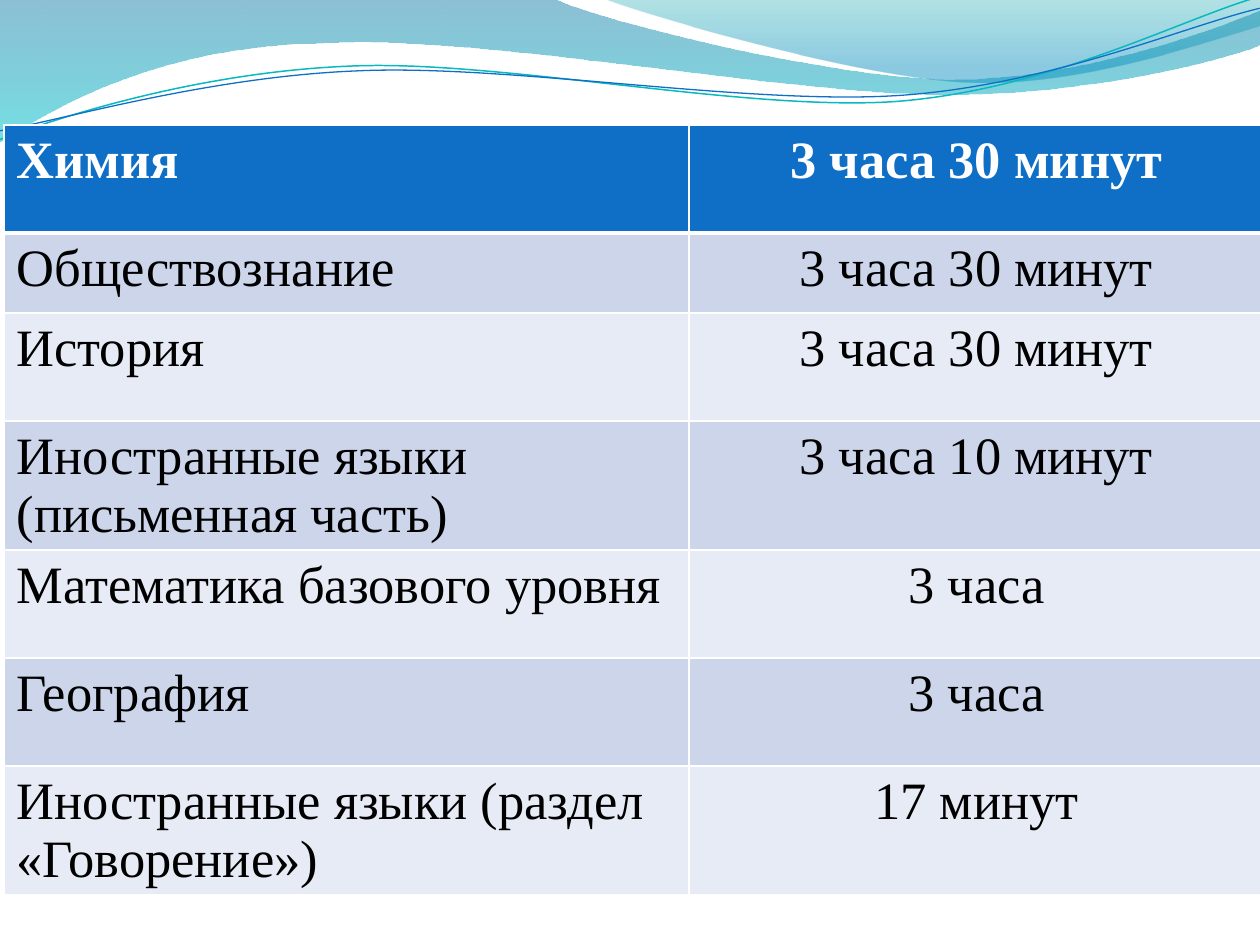
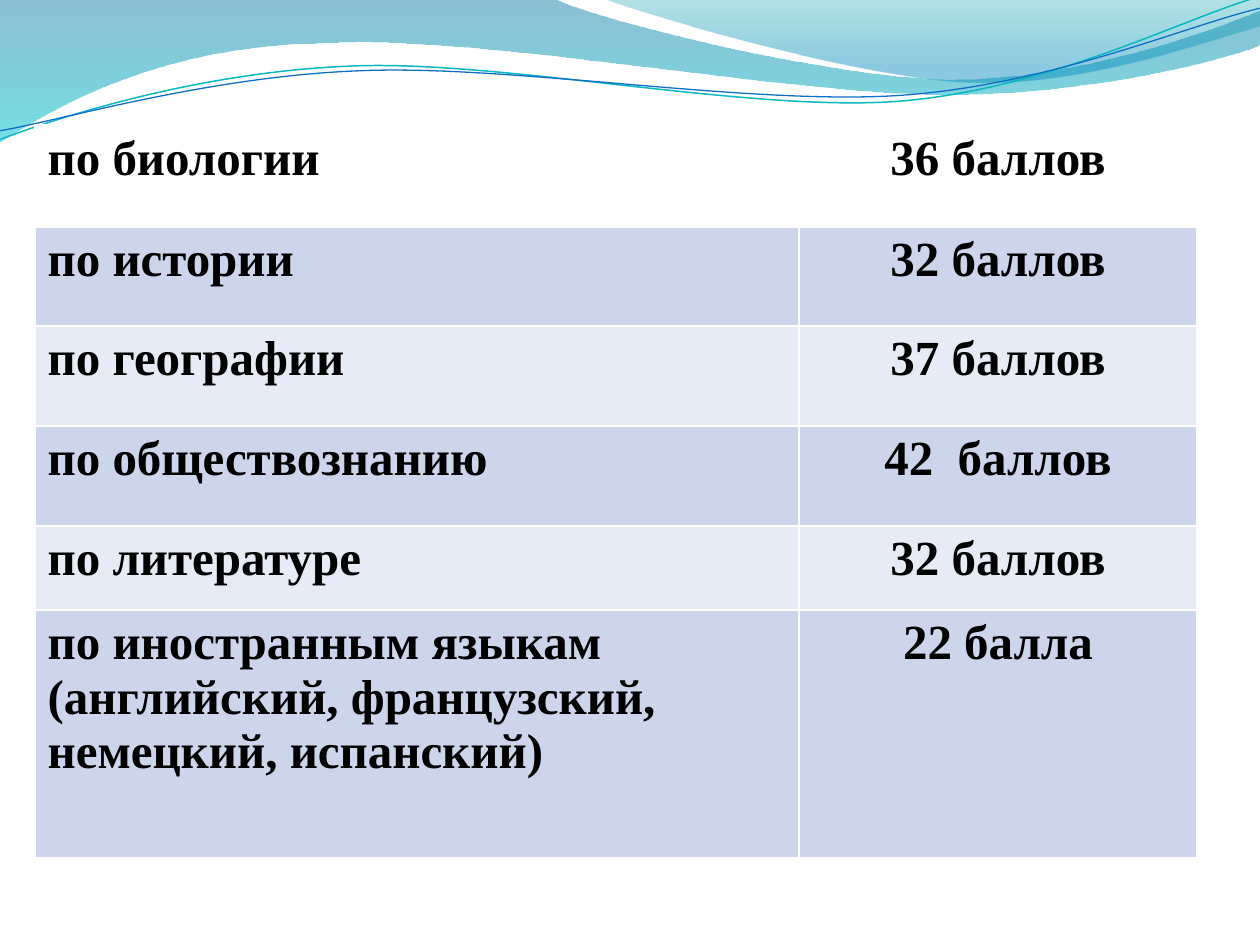
from lxml import etree
from pptx import Presentation
from pptx import util as u
from pptx.dml.color import RGBColor
from pptx.enum import text as tx
from pptx.oxml import ns

PX = 914400 / 126
WIDE, HIGH = 1260, 945
FONT = "Times New Roman"
HUES = {
    "white": "FFFFFF", "black": "000000", "head": "0F6FC6",
    "odd": "CCD5EA", "even": "E7EBF5",
    "sea": "0074A1", "aqua": "00C6CF", "teal": "00A1A9", "sky": "008BBF",
    "mint": "0AB8BF",
}

# Curves: a start, then points (two numbers) or Bezier pieces (six numbers)
BAND = [(0, 0), (554, -1), (600, 21, 837, 79, 955, 79),
        (1075, 79, 1207, 33, 1260, 11), (1261, 45),
        (1239, 55, 1096, 96, 940, 94), (784, 94, 481, 35, 324, 43),
        (163, 45, 58, 105, -1, 142), (0, 0)]
CREST = [(604, -1), (641, 14, 859, 78, 969, 82),
         (1079, 87, 1211, 40, 1260, 26), (1260, 0), (604, -1)]
# Threads are level here and tilted once placed
TILT = -2.7
THREADS = [
    ("mint", 0.85, [(-3, 110), (58, 90, 199, 52, 350, 53),
                    (499, 53, 745, 118, 896, 114),
                    (1049, 109, 1184, 45, 1260, 27)]),
    ("head", 0.75, [(-2, 101), (57, 94, 207, 57, 357, 58),
                    (509, 58, 750, 112, 902, 108),
                    (1052, 104, 1187, 52, 1262, 38)]),
]

HOURS = [
    ("Химия", "3 часа 30 минут"),
    ("Обществознание", "3 часа 30 минут"),
    ("История", "3 часа 30 минут"),
    ("Иностранные языки (письменная часть)", "3 часа 10 минут"),
    ("Математика базового уровня", "3 часа"),
    ("География", "3 часа"),
    ("Иностранные языки (раздел «Говорение»)", "17 минут"),
]
MARKS = [
    ("по биологии", "36 баллов"),
    ("по истории", "32 баллов"),
    ("по географии", "37 баллов"),
    ("по обществознанию", "42  баллов"),
    ("по литературе", "32 баллов"),
    ("по иностранным языкам (английский, французский, немецкий, испанский)",
     "22 балла"),
]


def emu(px):
    return u.Emu(round(px * PX))


def rgb(hue):
    return RGBColor.from_string(HUES[hue])


def bend(shape, box, curve):
    """Swap straight pieces of the outline for the curve's Bezier pieces."""
    lines = shape.element.findall(".//" + ns.qn("a:lnTo"))
    for line, piece in zip(lines, curve[1:]):
        if len(piece) == 2:
            continue
        arc = etree.Element(ns.qn("a:cubicBezTo"))
        for x, y in zip(piece[::2], piece[1::2]):
            etree.SubElement(arc, ns.qn("a:pt"),
                             x=str(emu(box[0] + x) - shape.left),
                             y=str(emu(box[1] + y) - shape.top))
        line.getparent().replace(line, arc)


def draw(slide, box, curve, close):
    spots = [(emu(box[0] + piece[-2]), emu(box[1] + piece[-1])) for piece in curve]
    pen = slide.shapes.build_freeform(*spots[0])
    pen.add_line_segments(spots[1:], close=close)
    shape = pen.convert_to_shape()
    shape.shadow.inherit = False
    bend(shape, box, curve)
    return shape


def shade(shape, *stops):
    """Fill from top to bottom; a stop is hue, place and opacity in percent."""
    shape.line.fill.background()
    shape.fill.gradient()
    shape.fill.gradient_angle = 270
    for stop, (hue, place, alpha) in zip(shape.fill.gradient_stops, stops):
        stop.color.rgb = rgb(hue)
        stop.position = place / 100
    tints = shape.element.spPr.findall(".//" + ns.qn("a:srgbClr"))
    for tint, (hue, place, alpha) in zip(tints, stops):
        etree.SubElement(tint, ns.qn("a:alpha"), val=str(alpha * 1000))


def waves(slide, layout, box=(0, 0)):
    """Draw the top waves, then hand them to the layout all slides share."""
    band = draw(slide, box, BAND, True)
    shade(band, ("sea", 0, 45), ("aqua", 100, 55))
    crest = draw(slide, box, CREST, True)
    shade(crest, ("teal", 0, 30), ("sky", 80, 45))
    parts = [band, crest]
    for hue, width, curve in THREADS:
        thread = draw(slide, box, curve, False)
        thread.rotation = TILT
        thread.fill.background()
        thread.line.color.rgb = rgb(hue)
        thread.line.width = u.Pt(width)
        parts.append(thread)
    for part in parts:
        layout.shapes.element.append(part.element)


def put(cell, text, size=30, hue="black", bold=False, align=tx.PP_ALIGN.LEFT):
    para = cell.text_frame.paragraphs[0]
    para.alignment = align
    run = para.add_run()
    run.text = text
    run.font.name = FONT
    run.font.size = u.Pt(size)
    run.font.bold = bold
    run.font.color.rgb = rgb(hue)


def edge(cell, **widths):
    """Give the four sides (L, R, T, B) white lines, widths in points."""
    props = cell._tc.get_or_add_tcPr()
    for side in "LRTB":
        line = etree.SubElement(props, ns.qn("a:ln" + side),
                                w=str(u.Pt(widths.get(side, 1))))
        fill = etree.SubElement(line, ns.qn("a:solidFill"))
        etree.SubElement(fill, ns.qn("a:srgbClr"), val=HUES["white"])


def grid(slide, box, cols, rows, data, head, ink, size, bold):
    """Place a banded table; head and ink are the first row's hues."""
    frame = slide.shapes.add_table(len(rows), len(cols), *map(emu, box),
                                   emu(sum(cols)), emu(sum(rows)))
    table = frame.table
    table.first_row = table.horz_banding = False
    for col, wide in zip(table.columns, cols):
        col.width = emu(wide)
    for r, (row, high) in enumerate(zip(table.rows, rows)):
        row.height = emu(high)
        for c, cell in enumerate(row.cells):
            edge(cell, T=3 if r == 1 else 1, B=1 if r else 3)
            cell.fill.solid()
            cell.fill.fore_color.rgb = rgb(("odd" if r % 2 else "even") if r else head)
            put(cell, data[r][c], size=size, bold=bold or r == 0,
                hue="black" if r else ink,
                align=tx.PP_ALIGN.CENTER if c else tx.PP_ALIGN.LEFT)


def main():
    deck = Presentation()
    deck.slide_width, deck.slide_height = emu(WIDE), emu(HIGH)
    blank = deck.slide_layouts[6]
    first, second = (deck.slides.add_slide(blank) for _ in range(2))
    waves(first, blank)
    # Exam lengths
    grid(first, (4, 125), (685, 575), [108, 80] + [108] * 5, HOURS,
         head="head", ink="white", size=30, bold=False)
    # Lowest passing marks
    grid(second, (35, 125), (764, 398), [101] + [100] * 3 + [84, 248], MARKS,
         head="white", ink="black", size=28, bold=True)
    deck.save("out.pptx")


if __name__ == "__main__":
    main()
